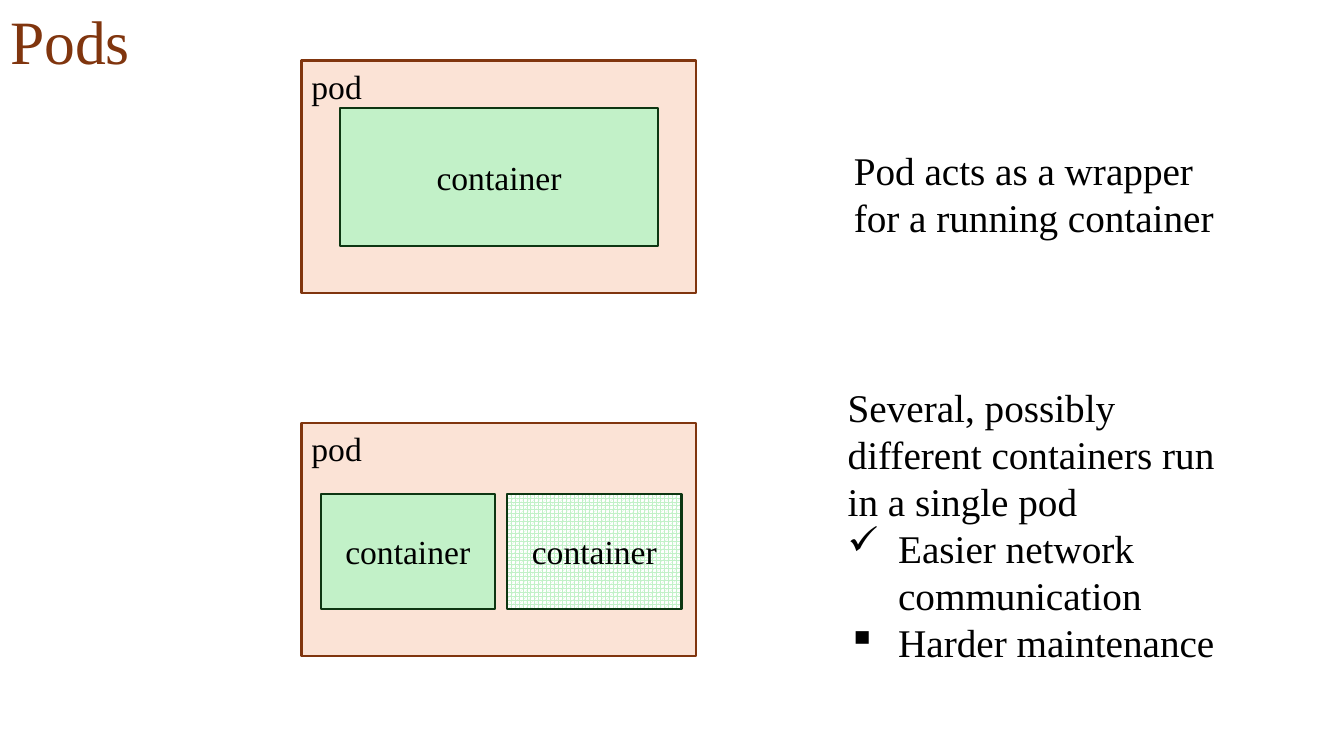
"""Build a slide explaining pods as wrappers for one or more containers."""
from pptx import Presentation
from pptx.dml.color import RGBColor
from pptx.enum import dml, shapes, text
from pptx.oxml.ns import qn
from pptx.util import Inches, Pt
from lxml import etree

BROWN = RGBColor(0x80, 0x35, 0x0E)
PEACH = RGBColor(0xFB, 0xE3, 0xD6)
GREEN = RGBColor(0xC2, 0xF1, 0xC8)
DARK_GREEN = RGBColor(0x0D, 0x36, 0x12)
BLACK = RGBColor(0, 0, 0)
WHITE = RGBColor(0xFF, 0xFF, 0xFF)
FONT = "Times New Roman"


def style_text(frame, size, color):
    frame.word_wrap = True
    for paragraph in frame.paragraphs:
        for run in paragraph.runs:
            run.font.name = FONT
            run.font.size = Pt(size)
            run.font.color.rgb = color


def add_box(label, bounds, fill, line):
    shape = slide.shapes.add_shape(
        shapes.MSO_SHAPE.RECTANGLE, *[Inches(value) for value in bounds])
    shape.shadow.inherit = False
    shape.fill.solid()
    shape.fill.fore_color.rgb = fill
    shape.line.color.rgb = line
    shape.line.width = Pt(1.5)
    shape.text_frame.text = label
    style_text(shape.text_frame, 24, BLACK)
    return shape


presentation = Presentation()
presentation.slide_width = Inches(13.33)
presentation.slide_height = Inches(7.5)
slide = presentation.slides.add_slide(presentation.slide_layouts[5])

title = slide.shapes.title
title.left, title.top = Inches(0), Inches(0)
title.width, title.height = Inches(1.57), Inches(0.89)
title.text_frame.text = "Pods"
title.text_frame.vertical_anchor = text.MSO_ANCHOR.MIDDLE
title.text_frame.paragraphs[0].alignment = text.PP_ALIGN.LEFT
title.text_frame.paragraphs[0].line_spacing = 0.9
style_text(title.text_frame, 44, BROWN)

for pod_top in (0.6, 4.2):
    pod = add_box("pod", (2.99, pod_top, 3.91, 2.31), PEACH, BROWN)
    pod.text_frame.vertical_anchor = text.MSO_ANCHOR.TOP
    pod.text_frame.paragraphs[0].alignment = text.PP_ALIGN.LEFT

container_bounds = [
    (3.37, 1.07, 3.16, 1.37),
    (3.18, 4.9, 1.73, 1.14),
    (5.03, 4.9, 1.73, 1.14),
]
for bounds in container_bounds:
    container = add_box("container", bounds, GREEN, DARK_GREEN)
    container.text_frame.vertical_anchor = text.MSO_ANCHOR.MIDDLE
    container.text_frame.paragraphs[0].alignment = text.PP_ALIGN.CENTER

different_container = container
different_container.fill.patterned()
different_container.fill.pattern = dml.MSO_PATTERN.SPHERE
different_container.fill.fore_color.rgb = GREEN
different_container.fill.back_color.rgb = WHITE

explanations = [
    ((8.31, 3.75, 4.06, 2.93), [
        ("Several, possibly different containers run in a single pod", None),
        ("Easier network communication", "✓"),
        ("Harder maintenance", "▪"),
    ]),
    ((8.37, 1.4, 4.06, 1.04), [
        ("Pod acts as a wrapper for a running container", None),
    ]),
]
for bounds, lines in explanations:
    explanation = slide.shapes.add_textbox(*[Inches(value) for value in bounds])
    frame = explanation.text_frame
    frame.text = "\n".join(line for line, bullet in lines)
    style_text(frame, 28, BLACK)
    frame.auto_size = text.MSO_AUTO_SIZE.SHAPE_TO_FIT_TEXT
    for paragraph, (line, bullet) in zip(frame.paragraphs, lines):
        if bullet:
            properties = paragraph._p.get_or_add_pPr()
            properties.set("marL", str(Inches(0.5)))
            properties.set("indent", str(Inches(-0.5)))
            etree.SubElement(properties, qn("a:buChar")).set("char", bullet)

presentation.save("out.pptx")
